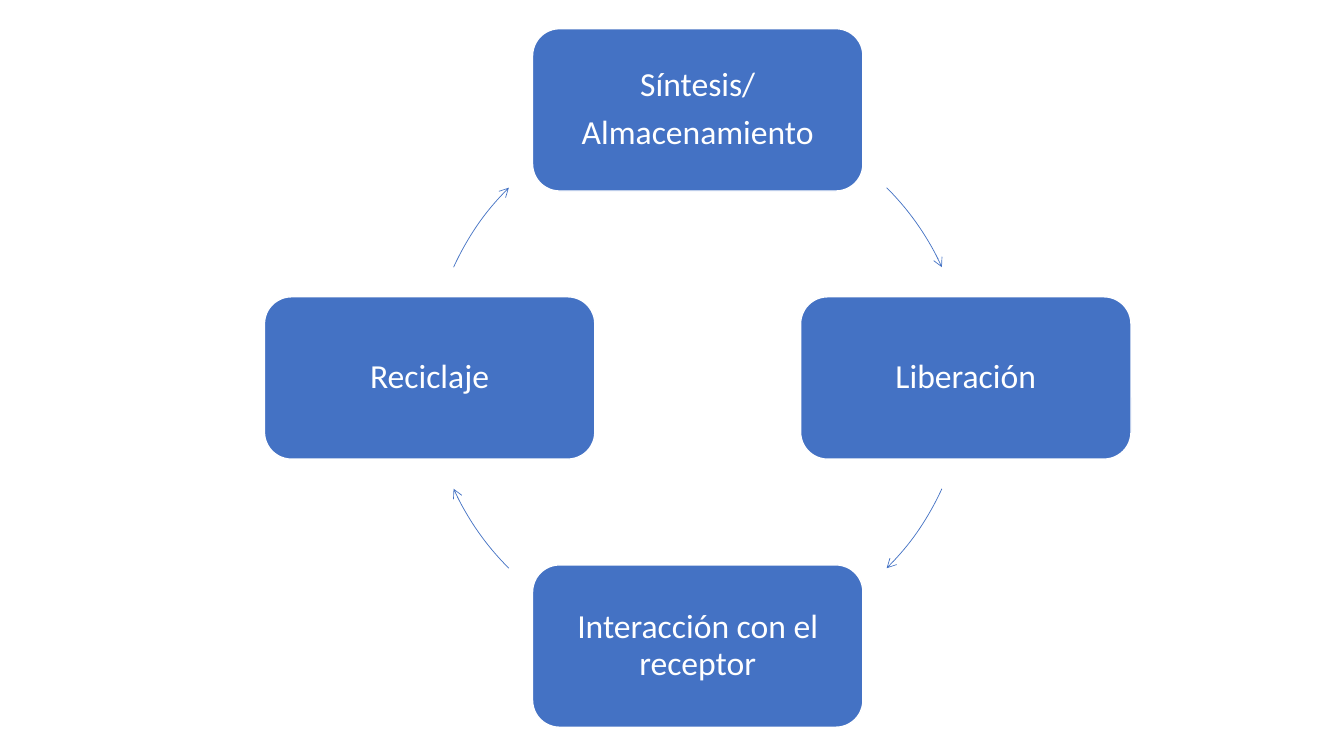
from lxml import etree
from pptx import Presentation
from pptx.dml.color import RGBColor
from pptx.enum.shapes import MSO_SHAPE
from pptx.enum.text import MSO_ANCHOR, PP_ALIGN
from pptx.oxml.ns import qn
from pptx.util import Pt

ROUNDED = MSO_SHAPE.ROUNDED_RECTANGLE
ARC = MSO_SHAPE.ARC
MIDDLE = MSO_ANCHOR.MIDDLE
CENTER = PP_ALIGN.CENTER

# Content: stages clockwise, as (column, row) steps from the cycle's centre
STAGES = [
    (("Síntesis/", "Almacenamiento"), 0, -1),
    (("Liberación",), 1, 0),
    (("Interacción con el receptor",), 0, 1),
    (("Reciclaje",), -1, 0),
]
# Middle angle of each arrow, in degrees clockwise from the right
ARROW_ANGLES = [325.2, 34.8, 145.2, 214.8]
ARROW_SWEEP = 20.8

BLUE, WHITE = "4472C4", "FFFFFF"
FONT, TEXT_SIZE = "Calibri", 24
SLIDE_W, SLIDE_H = 960, 540
CENTER_X, CENTER_Y, RADIUS = 498.4, 270, 191.5
STAGE_W, STAGE_H = 236, 116
INSET = 7.2
ANGLE_UNIT = 0.6  # adjustment value per degree


def color(hex_string):
    return RGBColor.from_string(hex_string)


def add_stage(slide, lines, column, row):
    left = CENTER_X + column * RADIUS - STAGE_W / 2
    top = CENTER_Y + row * RADIUS - STAGE_H / 2
    stage = slide.shapes.add_shape(ROUNDED, Pt(left), Pt(top), Pt(STAGE_W), Pt(STAGE_H))
    stage.shadow.inherit = False
    stage.fill.solid()
    stage.fill.fore_color.rgb = color(BLUE)
    stage.line.color.rgb = color(WHITE)
    stage.line.width = Pt(1)

    frame = stage.text_frame
    frame.word_wrap = True
    frame.vertical_anchor = MIDDLE
    frame.margin_left = frame.margin_right = Pt(INSET)
    frame.margin_top = frame.margin_bottom = Pt(INSET)
    for index, line in enumerate(lines):
        paragraph = frame.add_paragraph() if index else frame.paragraphs[0]
        paragraph.alignment = CENTER
        paragraph.line_spacing = 0.9
        paragraph.space_after = Pt(8.4)
        run = paragraph.add_run()
        run.text = line
        run.font.name = FONT
        run.font.size = Pt(TEXT_SIZE)
        run.font.color.rgb = color(WHITE)


def add_arrow(slide, angle):
    arrow = slide.shapes.add_shape(
        ARC, Pt(CENTER_X - RADIUS), Pt(CENTER_Y - RADIUS), Pt(2 * RADIUS), Pt(2 * RADIUS))
    arrow.adjustments[0] = (angle - ARROW_SWEEP / 2) * ANGLE_UNIT
    arrow.adjustments[1] = (angle + ARROW_SWEEP / 2) * ANGLE_UNIT
    arrow.shadow.inherit = False
    arrow.fill.background()
    arrow.line.color.rgb = color(BLUE)
    arrow.line.width = Pt(0.5)
    etree.SubElement(arrow.line._get_or_add_ln(), qn("a:tailEnd"), type="arrow")


def main():
    deck = Presentation()
    deck.slide_width, deck.slide_height = Pt(SLIDE_W), Pt(SLIDE_H)
    slide = deck.slides.add_slide(deck.slide_layouts[6])

    # Each stage is followed by the arrow that leaves it
    for (lines, column, row), angle in zip(STAGES, ARROW_ANGLES):
        add_stage(slide, lines, column, row)
        add_arrow(slide, angle)

    deck.save("out.pptx")


if __name__ == "__main__":
    main()
